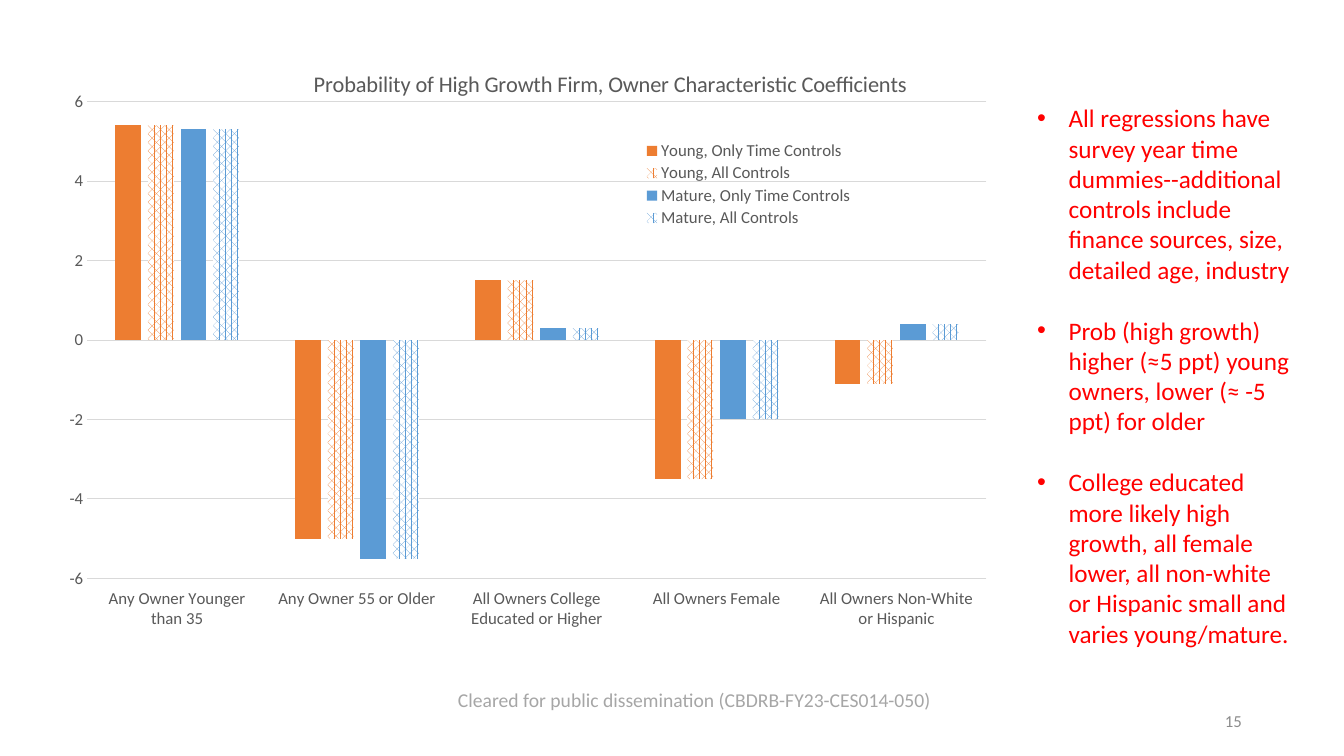
from lxml import etree
from pptx import Presentation
from pptx.chart import data
from pptx.dml.color import RGBColor
from pptx.enum import chart as charts, dml, text
from pptx.oxml import ns
from pptx.util import Pt

FONT = "Calibri"
COLORS = {
    "number": "8C8C8C", "notice": "A6A6A6", "bullet": "FF0000", "label": "595959",
    "grid": "D9D9D9", "young": "ED7D31", "mature": "5B9BD5", "white": "FFFFFF",
}
TITLE = "Probability of High Growth Firm, Owner Characteristic Coefficients"
CATEGORIES = [
    "Any Owner Younger than 35",
    "Any Owner 55 or Older",
    "All Owners College Educated or Higher",
    "All Owners Female",
    "All Owners Non-White or Hispanic",
]
SERIES = [
    ("Young, Only Time Controls", "young", False, (5.4, -5, 1.5, -3.5, -1.1)),
    ("Young, All Controls", "young", True, (5.4, -5, 1.5, -3.5, -1.1)),
    ("Mature, Only Time Controls", "mature", False, (5.3, -5.5, 0.3, -2, 0.4)),
    ("Mature, All Controls", "mature", True, (5.3, -5.5, 0.3, -2, 0.4)),
]
FINDINGS = [
    "All regressions have survey year time dummies--additional controls include "
    "finance sources, size, detailed age, industry",
    "Prob (high growth) higher (≈5 ppt) young owners, lower (≈ -5 ppt) for older",
    "College educated more likely high growth, all female lower, all non-white "
    "or Hispanic small and varies young/mature.",
]
NOTICE = "Cleared for public dissemination (CBDRB-FY23-CES014-050)"
CHART_BOX = (43.92, 24.48, 681.84, 437.76)
FINDINGS_BOX = (733.68, 69.84, 200.16, 399.6)
NOTICE_BOX = (300.96, 488.16, 390.24, 24.48)
NUMBER_BOX = (678.24, 500.4, 216, 28.8)


def color(name):
    return RGBColor.from_string(COLORS[name])


def style_font(font, size, name):
    font.name = FONT
    font.size = Pt(size)
    font.bold = False
    font.color.rgb = color(name)


def add_bullet(paragraph, indent):
    properties = paragraph._p.get_or_add_pPr()
    properties.set("marL", str(Pt(indent)))
    properties.set("indent", str(-Pt(indent)))
    etree.SubElement(properties, ns.qn("a:buFont"), typeface="Arial")
    etree.SubElement(properties, ns.qn("a:buChar"), char="•")


def add_text(slide, box, content, size, name, align=text.PP_ALIGN.LEFT,
             anchor=text.MSO_ANCHOR.TOP, indent=0, gap=0):
    frame = slide.shapes.add_textbox(*map(Pt, box)).text_frame
    frame.word_wrap = True
    frame.vertical_anchor = anchor
    for index, line in enumerate(content):
        paragraph = frame.add_paragraph() if index else frame.paragraphs[0]
        paragraph.alignment = align
        if index:
            paragraph.space_before = Pt(gap)
        if indent:
            add_bullet(paragraph, indent)
        run = paragraph.add_run()
        run.text = line
        style_font(run.font, size, name)


def place(element, index, inner=False, **fractions):
    for old in element.findall(ns.qn("c:layout")):
        element.remove(old)
    layout = etree.Element(ns.qn("c:layout"))
    manual = etree.SubElement(layout, ns.qn("c:manualLayout"))
    if inner:
        etree.SubElement(manual, ns.qn("c:layoutTarget"), val="inner")
    for side in "xy":
        etree.SubElement(manual, ns.qn(f"c:{side}Mode"), val="edge")
    for side, fraction in fractions.items():
        etree.SubElement(manual, ns.qn(f"c:{side}"), val=str(fraction))
    element.insert(index, layout)


def style_series(series, name, patterned):
    series.invert_if_negative = False
    fill = series.format.fill
    if patterned:
        fill.patterned()
        fill.pattern = dml.MSO_PATTERN.PERCENT_60
        fill.fore_color.rgb = color(name)
        fill.back_color.rgb = color("white")
    else:
        fill.solid()
        fill.fore_color.rgb = color(name)


def style_line(line):
    line.color.rgb = color("grid")
    line.width = Pt(0.75)


def add_coefficient_chart(slide):
    chart_data = data.CategoryChartData(number_format="General")
    chart_data.categories = CATEGORIES
    for label, _, _, values in SERIES:
        chart_data.add_series(label, values)
    chart = slide.shapes.add_chart(
        charts.XL_CHART_TYPE.COLUMN_CLUSTERED, *map(Pt, CHART_BOX), chart_data).chart
    style_font(chart.font, 12, "label")

    chart.has_title = True
    paragraph = chart.chart_title.text_frame.paragraphs[0]
    run = paragraph.add_run()
    run.text = TITLE
    style_font(run.font, 16, "label")
    place(chart.chart_title._element, 1, x=0.26, y=0.05)

    chart.has_legend = True
    chart.legend.position = charts.XL_LEGEND_POSITION.RIGHT
    chart.legend.include_in_layout = False
    style_font(chart.legend.font, 12, "label")
    place(chart.legend._element, 1, x=0.6, y=0.17, w=0.24, h=0.15)

    plot = chart.plots[0]
    plot.gap_width = 219
    plot.overlap = -27
    plot.vary_by_categories = False
    for series, (_, name, patterned, _) in zip(plot.series, SERIES):
        style_series(series, name, patterned)
    place(plot._element.getparent(), 0, inner=True, x=0.027, y=0.11, w=0.942, h=0.778)

    for axis in (chart.category_axis, chart.value_axis):
        axis.major_tick_mark = charts.XL_TICK_MARK.NONE
        axis.minor_tick_mark = charts.XL_TICK_MARK.NONE
        style_font(axis.tick_labels.font, 12, "label")
    chart.category_axis.tick_label_position = charts.XL_TICK_LABEL_POSITION.LOW
    style_line(chart.category_axis.format.line)
    value_axis = chart.value_axis
    value_axis.minimum_scale, value_axis.maximum_scale = -6, 6
    value_axis.major_unit = 2
    value_axis.format.line.fill.background()
    style_line(value_axis.major_gridlines.format.line)


def main():
    presentation = Presentation()
    presentation.slide_width = Pt(960)
    presentation.slide_height = Pt(540)
    slide = presentation.slides.add_slide(presentation.slide_layouts[6])
    add_text(slide, NUMBER_BOX, ["15"], 12, "number",
             align=text.PP_ALIGN.RIGHT, anchor=text.MSO_ANCHOR.MIDDLE)
    add_text(slide, NOTICE_BOX, [NOTICE], 14, "notice", align=text.PP_ALIGN.CENTER)
    add_text(slide, FINDINGS_BOX, FINDINGS, 18, "bullet", indent=22.5, gap=22)
    add_coefficient_chart(slide)
    presentation.save("out.pptx")


if __name__ == "__main__":
    main()
